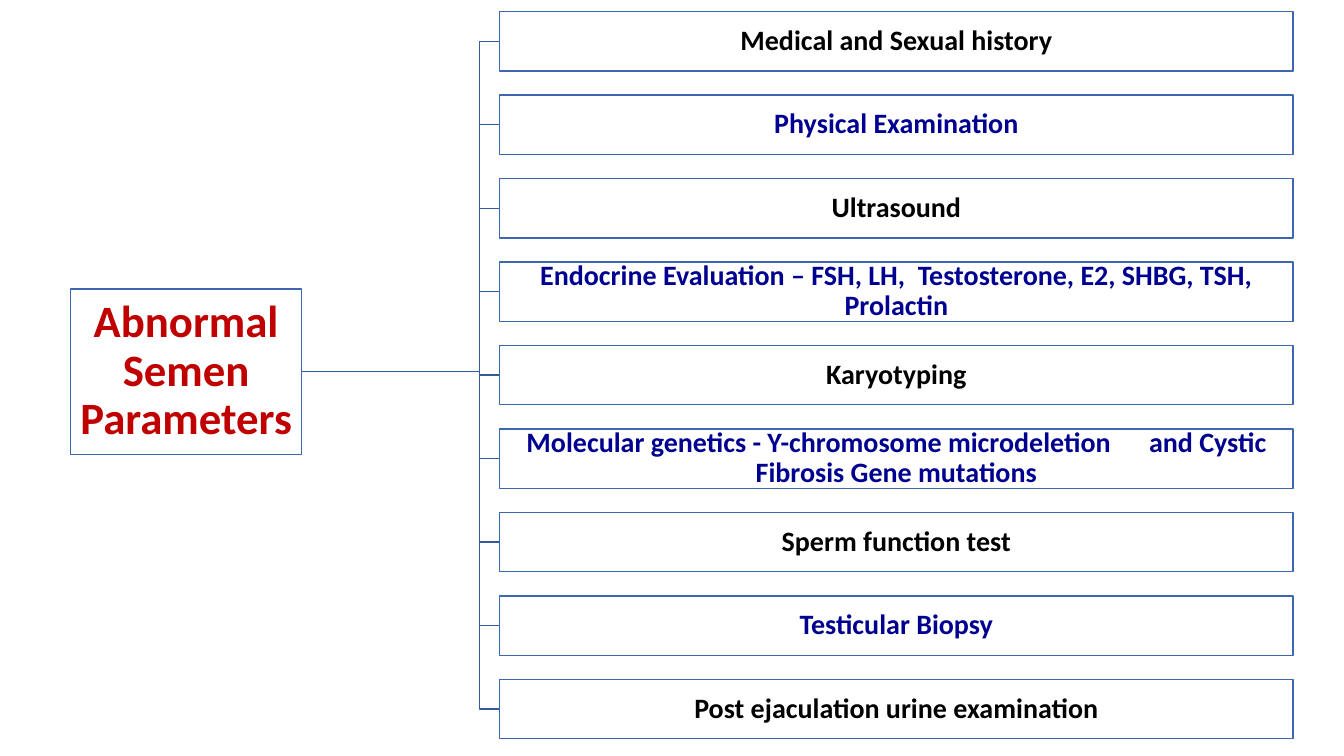
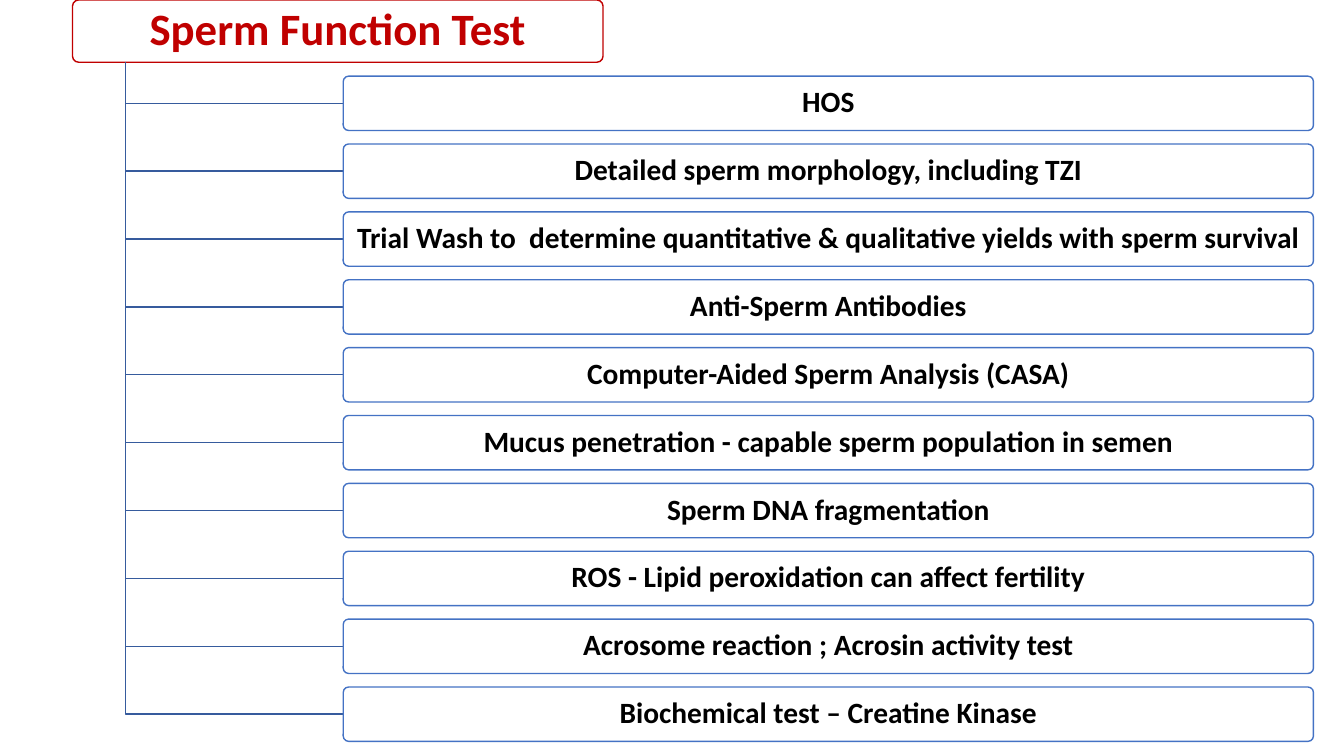
from dataclasses import dataclass
from itertools import cycle

from pptx import Presentation
from pptx.dml.color import RGBColor as Rgb
from pptx.enum.shapes import MSO_SHAPE as Preset
from pptx.enum.text import MSO_ANCHOR as Anchor, PP_ALIGN as Align
from pptx.util import Pt


@dataclass(frozen=True)
class Theme:
    font: str = "Calibri"
    paper: Rgb = Rgb(0xFF, 0xFF, 0xFF)
    black: Rgb = Rgb(0x00, 0x00, 0x00)
    navy: Rgb = Rgb(0x00, 0x00, 0x90)
    red: Rgb = Rgb(0xC0, 0x00, 0x00)
    branch: Rgb = Rgb(0x36, 0x5B, 0x9D)
    box_edge: Rgb = Rgb(0x3E, 0x67, 0xB2)
    rounded_edge: Rgb = Rgb(0x44, 0x72, 0xC4)
    root_size: int = 32
    evaluation_size: int = 20
    test_size: int = 21
    line_width: int = 1


THEME = Theme()
WIDE_GAP = 22.6

EVALUATIONS = [
    ["Medical and Sexual history"],
    ["Physical Examination"],
    ["Ultrasound"],
    ["Endocrine Evaluation – FSH, LH,  Testosterone, E2, SHBG, TSH, Prolactin"],
    ["Karyotyping"],
    ["Molecular genetics - Y-chromosome microdeletion",
     "and Cystic Fibrosis Gene mutations"],
    ["Sperm function test"],
    ["Testicular Biopsy"],
    ["Post ejaculation urine examination"],
]
FUNCTION_TESTS = [
    ["HOS"],
    ["Detailed sperm morphology, including TZI"],
    ["Trial Wash to  determine quantitative & qualitative yields with sperm survival"],
    ["Anti-Sperm Antibodies"],
    ["Computer-Aided Sperm Analysis (CASA)"],
    ["Mucus penetration - capable sperm population in semen"],
    ["Sperm DNA fragmentation"],
    ["ROS - Lipid peroxidation can affect fertility"],
    ["Acrosome reaction ; Acrosin activity test"],
    ["Biochemical test – Creatine Kinase"],
]


def apply_format(target, values):
    for attribute, value in values.items():
        setattr(target, attribute, value)


def style_line(shape, color):
    shape.shadow.inherit = False
    shape.line.color.rgb = color
    shape.line.width = Pt(THEME.line_width)


def write_label(paragraph, phrases, size, color):
    apply_format(paragraph, {"alignment": Align.CENTER, "line_spacing": 0.9})
    apply_format(paragraph.font, {"name": THEME.font, "size": Pt(size), "bold": True})
    paragraph.font.color.rgb = color
    for index, phrase in enumerate(phrases):
        if index:
            add_run(paragraph, " ", size, color, WIDE_GAP)
        add_run(paragraph, phrase, size, color)


def add_run(paragraph, text, size, color, tracking=0):
    run = paragraph.add_run()
    run.text = text
    apply_format(run.font, {"name": THEME.font, "size": Pt(size), "bold": True})
    run.font.color.rgb = color
    if tracking:
        run._r.get_or_add_rPr().set("spc", str(round(tracking * 100)))


def add_box(slide, preset, bounds, phrases, size, color, edge, insets):
    box = slide.shapes.add_shape(preset, *map(Pt, bounds))
    if preset == Preset.ROUNDED_RECTANGLE:
        box.adjustments[0] = 0.1
    box.fill.solid()
    box.fill.fore_color.rgb = THEME.paper
    style_line(box, edge)
    side, end = map(Pt, insets)
    apply_format(box.text_frame, {
        "word_wrap": True, "vertical_anchor": Anchor.MIDDLE,
        "margin_left": side, "margin_right": side,
        "margin_top": end, "margin_bottom": end,
    })
    write_label(box.text_frame.paragraphs[0], phrases, size, color)


def add_branch(slide, points):
    start, *corners = [(Pt(x), Pt(y)) for x, y in points]
    builder = slide.shapes.build_freeform(*start)
    builder.add_line_segments(corners, close=False)
    branch = builder.convert_to_shape()
    branch.fill.background()
    style_line(branch, THEME.branch)


def stack(labels, left, top, width, height, pitch):
    return [(label, (left, top + row * pitch, width, height))
            for row, label in enumerate(labels)]


def middle(bounds):
    return bounds[1] + bounds[3] / 2


def build_evaluation_tree(slide):
    root = (50.5, 206.5, 165, 118)
    fork, start = 342.7, (215.5, middle(root))
    leaves = stack(EVALUATIONS, 357, 8.3, 566.6, 42.4, 59.62)
    for _, bounds in leaves:
        y = middle(bounds)
        add_branch(slide, [start, (fork, start[1]), (fork, y), (bounds[0], y)])
    add_box(slide, Preset.RECTANGLE, root, ["Abnormal Semen Parameters"],
            THEME.root_size, THEME.red, THEME.box_edge, (1.5, 1.5))
    for (label, bounds), color in zip(leaves, cycle([THEME.black, THEME.navy])):
        add_box(slide, Preset.RECTANGLE, bounds, label,
                THEME.evaluation_size, color, THEME.box_edge, (1, 1))


def build_function_test_tree(slide):
    root = (51.8, 0, 379, 44.5)
    trunk = 89.6
    add_box(slide, Preset.ROUNDED_RECTANGLE, root, ["Sperm Function Test"],
            THEME.root_size, THEME.red, THEME.red, (5, 3))
    for label, bounds in stack(FUNCTION_TESTS, 245.2, 54.4, 693, 38.8, 48.48):
        y = middle(bounds)
        add_branch(slide, [(trunk, root[3]), (trunk, y), (bounds[0], y)])
        add_box(slide, Preset.ROUNDED_RECTANGLE, bounds, label,
                THEME.test_size, THEME.black, THEME.rounded_edge, (3, 2))


def main():
    deck = Presentation()
    apply_format(deck, {"slide_width": Pt(960), "slide_height": Pt(540)})
    blank = deck.slide_layouts[6]
    for build in (build_evaluation_tree, build_function_test_tree):
        build(deck.slides.add_slide(blank))
    deck.save("out.pptx")


if __name__ == "__main__":
    main()
